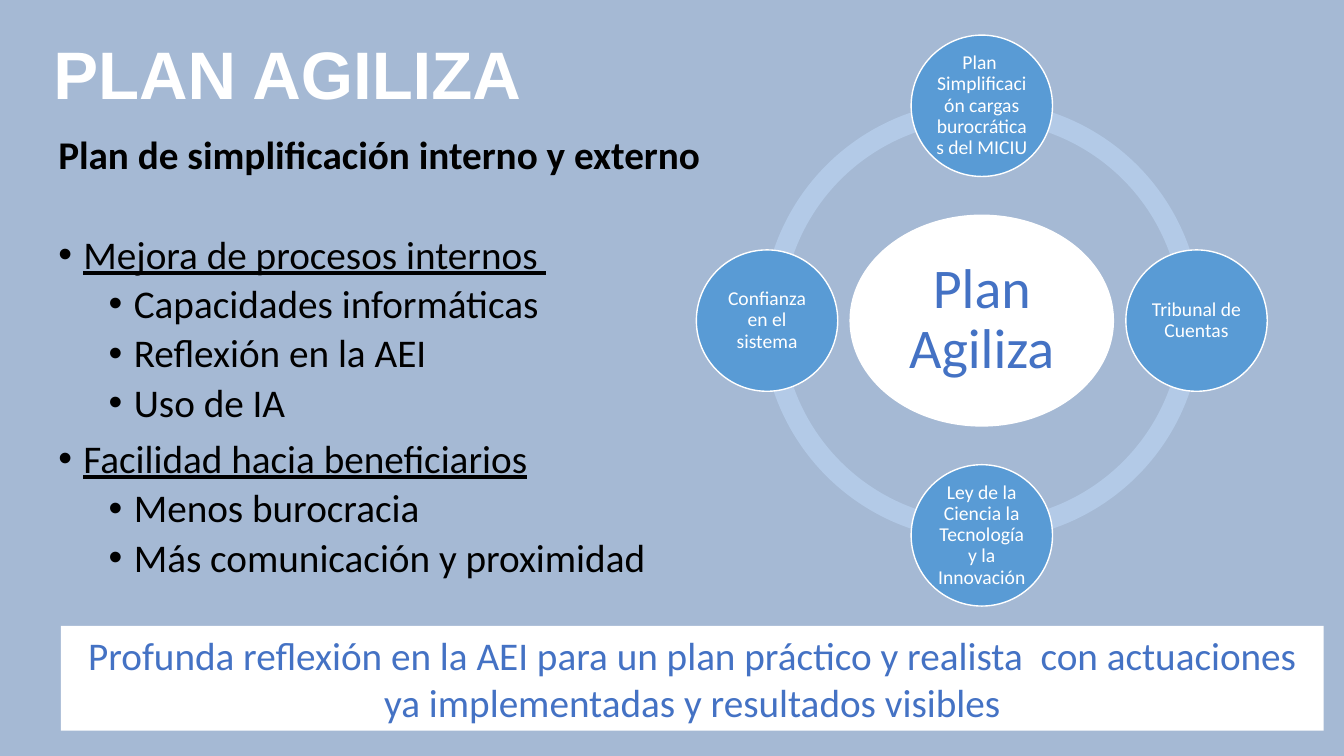
"""Build the Plan Agiliza slide: a list of improvements, a ring of drivers and a closing message."""
import math

from lxml import etree
from pptx import Presentation
from pptx.dml.color import RGBColor
from pptx.enum import shapes, text
from pptx.oxml import ns
from pptx.util import Pt

WHITE, BLACK, BLUE, NODE, RING = "FFFFFF", "000000", "4472C4", "599BD5", "B3CAE7"


def write(paragraph, words, size=28, color=BLACK, font="Calibri", bold=False, underline=False,
          align=text.PP_ALIGN.LEFT, spacing=0.9, before=0, margin=0, bullet=None):
    paragraph.alignment, paragraph.line_spacing = align, spacing
    paragraph.space_before = Pt(before)
    run = paragraph.add_run()
    run.text = words
    run.font.name, run.font.size = font, Pt(size)
    run.font.bold, run.font.underline = bold, underline
    run.font.color.rgb = RGBColor.from_string(color)
    props = paragraph._p.get_or_add_pPr()
    props.set("marL", str(Pt(margin)))
    props.set("indent", str(Pt(-18 if bullet else 0)))
    if bullet:
        etree.SubElement(props, ns.qn("a:buChar")).set("char", bullet)
    else:
        etree.SubElement(props, ns.qn("a:buNone"))


def draw(parent, kind, left, top, width, height, fill, line=None):
    shape = parent.add_shape(kind, Pt(left), Pt(top), Pt(width), Pt(height))
    shape.shadow.inherit = False
    shape.fill.solid()
    shape.fill.fore_color.rgb = RGBColor.from_string(fill)
    if line:
        shape.line.color.rgb = RGBColor.from_string(line)
        shape.line.width = Pt(1)
    else:
        shape.line.fill.background()
    return shape


prs = Presentation()
prs.slide_width, prs.slide_height = Pt(960), Pt(540)
slide = prs.slides.add_slide(prs.slide_layouts[1])
slide.background.fill.solid()
slide.background.fill.fore_color.rgb = RGBColor.from_string("A5B9D4")

title = slide.shapes.title
title.left, title.top, title.width, title.height = Pt(31), Pt(25), Pt(828), Pt(61)
title.text_frame.auto_size = text.MSO_AUTO_SIZE.NONE
title.text_frame.vertical_anchor = text.MSO_ANCHOR.MIDDLE
write(title.text_frame.paragraphs[0], "PLAN AGILIZA", size=48, color=WHITE, font="Arial", bold=True)

improvements = slide.placeholders[1]
improvements.left, improvements.top = Pt(38), Pt(93.6)
improvements.width, improvements.height = Pt(575), Pt(384.5)
frame = improvements.text_frame
frame.auto_size = text.MSO_AUTO_SIZE.NONE
frame.vertical_anchor = text.MSO_ANCHOR.TOP
frame.margin_left = frame.margin_right = frame.margin_top = frame.margin_bottom = Pt(3.6)
write(frame.paragraphs[0], "Plan de simplificación interno y externo", bold=True)
goals = [
    ("Mejora de procesos internos ", 40.5,
     ["Capacidades informáticas", "Reflexión en la AEI", "Uso de IA"]),
    ("Facilidad hacia beneficiarios", 10,
     ["Menos burocracia", "Más comunicación y proximidad"]),
]
for goal, gap, actions in goals:
    write(frame.add_paragraph(), goal, underline=True, before=gap, margin=18, bullet="•")
    for action in actions:
        item = frame.add_paragraph()
        item.level = 1
        write(item, action, before=5, margin=54, bullet="•")

center_x, center_y, orbit = 701.3, 229, 153.4
ring_size, node_size = 314, 101
diagram = slide.shapes.add_group_shape().shapes
for quarter in range(4):
    arc = draw(diagram, shapes.MSO_SHAPE.BLOCK_ARC, center_x - ring_size / 2,
               center_y - ring_size / 2, ring_size, ring_size, RING)
    arc.adjustments[0] = quarter * 54
    arc.adjustments[1] = (quarter + 1) % 4 * 54
    arc.adjustments[2] = 0.046

bubbles = [("Plan Agiliza", center_x, center_y, 188, 150.5, WHITE, BLUE, 40, 4.3)]
drivers = ["Plan  Simplificación cargas burocráticas del MICIU", "Tribunal de Cuentas",
           "Ley de la Ciencia la Tecnología y la Innovación", "Confianza en el sistema"]
for step, driver in enumerate(drivers):
    angle = math.radians(90 * step - 90)
    bubbles.append((driver, center_x + orbit * math.cos(angle), center_y + orbit * math.sin(angle),
                    node_size, node_size, NODE, WHITE, 14, 1.4))
for words, x, y, width, height, fill, color, size, inset in bubbles:
    bubble = draw(diagram, shapes.MSO_SHAPE.OVAL, x - width / 2, y - height / 2,
                  width, height, fill, WHITE)
    frame = bubble.text_frame
    frame.word_wrap = True
    frame.margin_left = frame.margin_right = frame.margin_top = frame.margin_bottom = Pt(inset)
    write(frame.paragraphs[0], words, size=size, color=color, align=text.PP_ALIGN.CENTER)

message = draw(slide.shapes, shapes.MSO_SHAPE.RECTANGLE, 43.4, 447, 902, 75, WHITE)
message.text_frame.word_wrap = True
write(message.text_frame.paragraphs[0],
      "Profunda reflexión en la AEI para un plan práctico y realista  con actuaciones "
      "ya implementadas y resultados visibles",
      color=BLUE, align=text.PP_ALIGN.CENTER, spacing=1.0)

prs.save("out.pptx")
